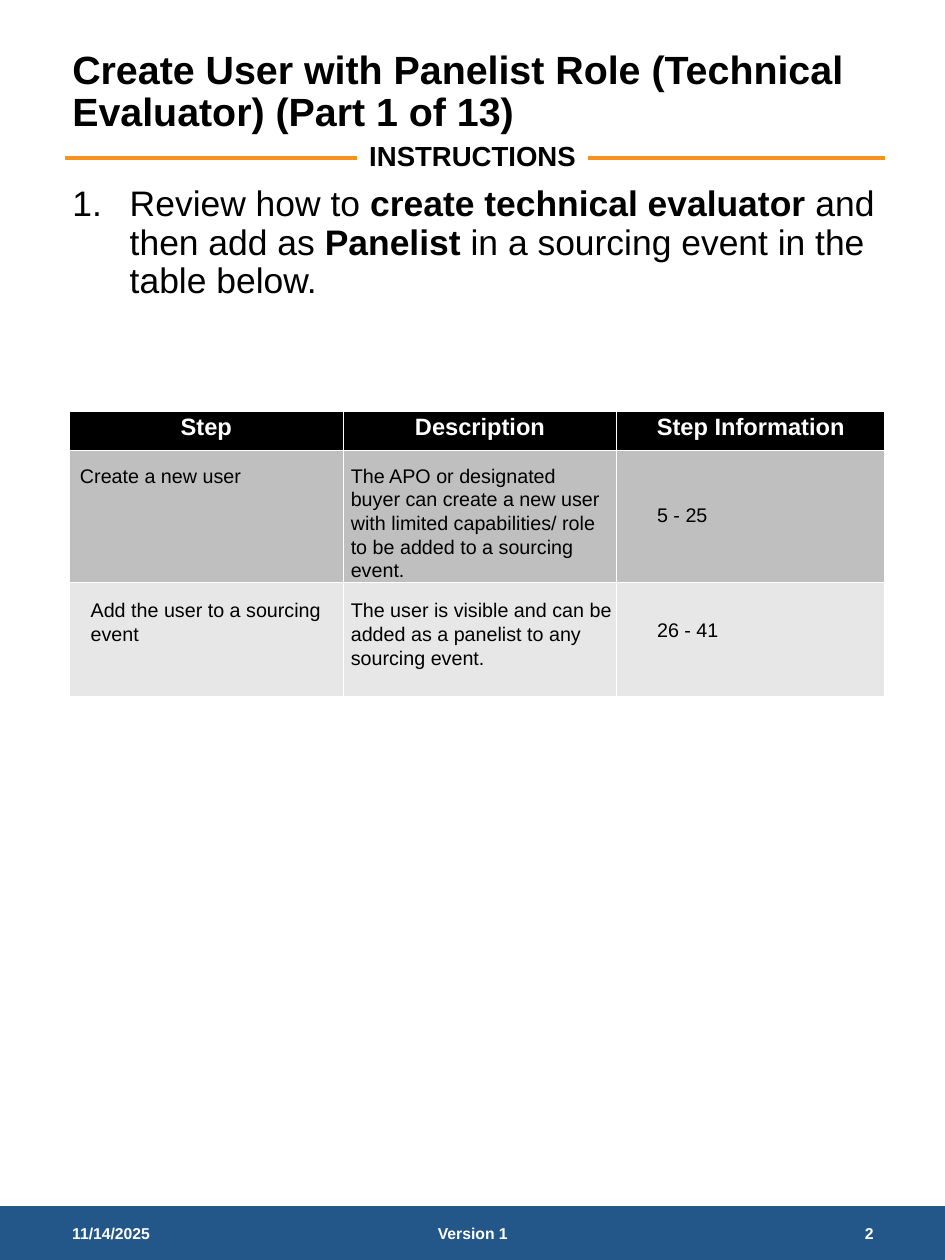
from lxml import etree
from pptx import Presentation
from pptx import util as u
from pptx.dml.color import RGBColor
from pptx.enum import shapes, text
from pptx.oxml import ns

COLORS = {"black": "000000", "white": "FFFFFF", "blue": "235789",
          "orange": "F7921E", "gray": "BFBFBF", "light": "E7E7E7"}
FONT = "Arial"
LEFT, CENTER, RIGHT = text.PP_ALIGN.LEFT, text.PP_ALIGN.CENTER, text.PP_ALIGN.RIGHT
MIDDLE = text.MSO_ANCHOR.MIDDLE
COLUMN_WIDTHS = [3.86, 3.86, 3.78]
ROW_HEIGHTS = [0.56, 1.86, 1.61]
ROW_COLORS = ["black", "gray", "light"]
HEADERS = ["Step", "Description", "Step Information"]
STEP_TEXTS = [
    (1.03, 6.49, 3.96, 0.44, "Create a new user"),
    (4.85, 6.49, 3.86, 1.45, "The APO or designated buyer can create a new user with "
                             "limited capabilities/ role to be added to a sourcing event."),
    (9.17, 7.04, 3.31, 0.44, "5 - 25"),
    (1.18, 8.39, 4.11, 0.77, "Add the user to a sourcing event"),
    (4.85, 8.39, 4.22, 1.11, "The user is visible and can be added as a panelist "
                             "to any sourcing event."),
    (9.17, 8.67, 3.31, 0.44, "26 - 41"),
]
FOOTERS = [(0.92, 3, "11/14/2025", LEFT), (4.42, 4.5, "Version 1", CENTER),
           (9.42, 3, "2", RIGHT)]
INSTRUCTION = [("Review how to ", False), ("create technical evaluator ", True),
               ("and then add as ", False), ("Panelist ", True),
               ("in a sourcing event in the table below.", False)]


def rgb(name):
    """Return the named colour."""
    return RGBColor.from_string(COLORS[name])


def format_run(run, size, color="black", bold=False):
    """Give a run its font, size, colour and weight."""
    run.font.name = FONT
    run.font.size = u.Pt(size)
    run.font.bold = bold
    run.font.color.rgb = rgb(color)


def place(shape, left, top, width, height):
    """Move and size a shape, in inches."""
    shape.left, shape.top = u.Inches(left), u.Inches(top)
    shape.width, shape.height = u.Inches(width), u.Inches(height)


def add_text(slide, box, words, size, color="black", bold=False, align=LEFT, anchor=None):
    """Add a wrapped one-paragraph text box."""
    frame = slide.shapes.add_textbox(*map(u.Inches, box)).text_frame
    frame.word_wrap = True
    if anchor is not None:
        frame.vertical_anchor = anchor
    frame.text = words
    paragraph = frame.paragraphs[0]
    paragraph.alignment = align
    format_run(paragraph.runs[0], size, color, bold)


def add_rectangle(slide, box, color):
    """Add a flat rectangle with a matching outline."""
    shape = slide.shapes.add_shape(shapes.MSO_SHAPE.RECTANGLE, *map(u.Inches, box))
    shape.shadow.inherit = False
    shape.fill.solid()
    shape.fill.fore_color.rgb = rgb(color)
    shape.line.color.rgb = rgb(color)
    shape.line.width = u.Pt(1)


def add_rule(slide, left, right, top):
    """Add the orange horizontal rule."""
    line = slide.shapes.add_connector(
        shapes.MSO_CONNECTOR.STRAIGHT, *map(u.Inches, (left, top, right, top)))
    line.line.color.rgb = rgb("orange")
    line.line.width = u.Pt(4.5)
    etree.SubElement(line._element.spPr, ns.qn("a:effectLst"))


def fill_title(slide):
    """Place and format the slide title."""
    title = slide.shapes.title
    place(title, 0.92, 0.87, 11.5, 0.88)
    frame = title.text_frame
    frame.text = "Create User with Panelist Role (Technical Evaluator) (Part 1 of 13)"
    frame.auto_size = text.MSO_AUTO_SIZE.NONE
    frame.vertical_anchor = MIDDLE
    paragraph = frame.paragraphs[0]
    paragraph.alignment = LEFT
    paragraph.line_spacing = 0.9
    format_run(paragraph.runs[0], 40, bold=True)


def fill_body(slide):
    """Place and format the numbered instruction."""
    body = slide.placeholders[1]
    place(body, 0.92, 2.58, 11.56, 6.62)
    body.text_frame.auto_size = text.MSO_AUTO_SIZE.NONE
    paragraph = body.text_frame.paragraphs[0]
    properties = paragraph._p.get_or_add_pPr()
    properties.set("marL", str(u.Inches(0.81)))
    properties.set("indent", str(u.Inches(-0.81)))
    etree.SubElement(properties, ns.qn("a:buFont"), typeface="+mj-lt")
    etree.SubElement(properties, ns.qn("a:buAutoNum"), type="arabicPeriod")
    paragraph.line_spacing = 0.9
    paragraph.space_before = u.Pt(0)
    for words, bold in INSTRUCTION:
        run = paragraph.add_run()
        run.text = words
        format_run(run, 36, bold=bold)


def style_cell(cell, color):
    """Give a cell white borders and a solid fill."""
    properties = cell._tc.get_or_add_tcPr()
    for side in ("lnL", "lnR", "lnT", "lnB"):
        border = etree.SubElement(properties, ns.qn(f"a:{side}"), w=str(u.Pt(1)))
        fill = etree.SubElement(border, ns.qn("a:solidFill"))
        etree.SubElement(fill, ns.qn("a:srgbClr"), val=COLORS["white"])
    cell.fill.solid()
    cell.fill.fore_color.rgb = rgb(color)


def add_step_table(slide):
    """Add the table of steps with its header row."""
    table = slide.shapes.add_table(
        len(ROW_HEIGHTS), len(COLUMN_WIDTHS), u.Inches(0.98), u.Inches(5.8),
        u.Inches(sum(COLUMN_WIDTHS)), u.Inches(sum(ROW_HEIGHTS))).table
    for column, width in zip(table.columns, COLUMN_WIDTHS):
        column.width = u.Inches(width)
    for row, height, color in zip(table.rows, ROW_HEIGHTS, ROW_COLORS):
        row.height = u.Inches(height)
        for cell in row.cells:
            style_cell(cell, color)
    for cell, words in zip(table.rows[0].cells, HEADERS):
        cell.text_frame.text = words
        paragraph = cell.text_frame.paragraphs[0]
        paragraph.alignment = CENTER
        format_run(paragraph.runs[0], 24, "white", True)


def main():
    """Build the slide and save it."""
    presentation = Presentation()
    presentation.slide_width = u.Inches(13.33)
    presentation.slide_height = u.Inches(17.78)
    slide = presentation.slides.add_slide(presentation.slide_layouts[1])
    add_rectangle(slide, (0, 17.02, 13.33, 0.75), "blue")
    add_rule(slide, 0.92, 12.48, 2.23)
    add_rectangle(slide, (5.04, 1.98, 3.25, 0.49), "white")
    fill_title(slide)
    add_text(slide, (4.98, 1.91, 3.37, 0.57), "INSTRUCTIONS", 28, bold=True, align=CENTER)
    fill_body(slide)
    add_step_table(slide)
    for *box, words in STEP_TEXTS:
        add_text(slide, box, words, 20)
    for left, width, words, align in FOOTERS:
        add_text(slide, (left, 17.02, width, 0.75), words, 16, "white", True, align, MIDDLE)
    presentation.save("out.pptx")


if __name__ == "__main__":
    main()
